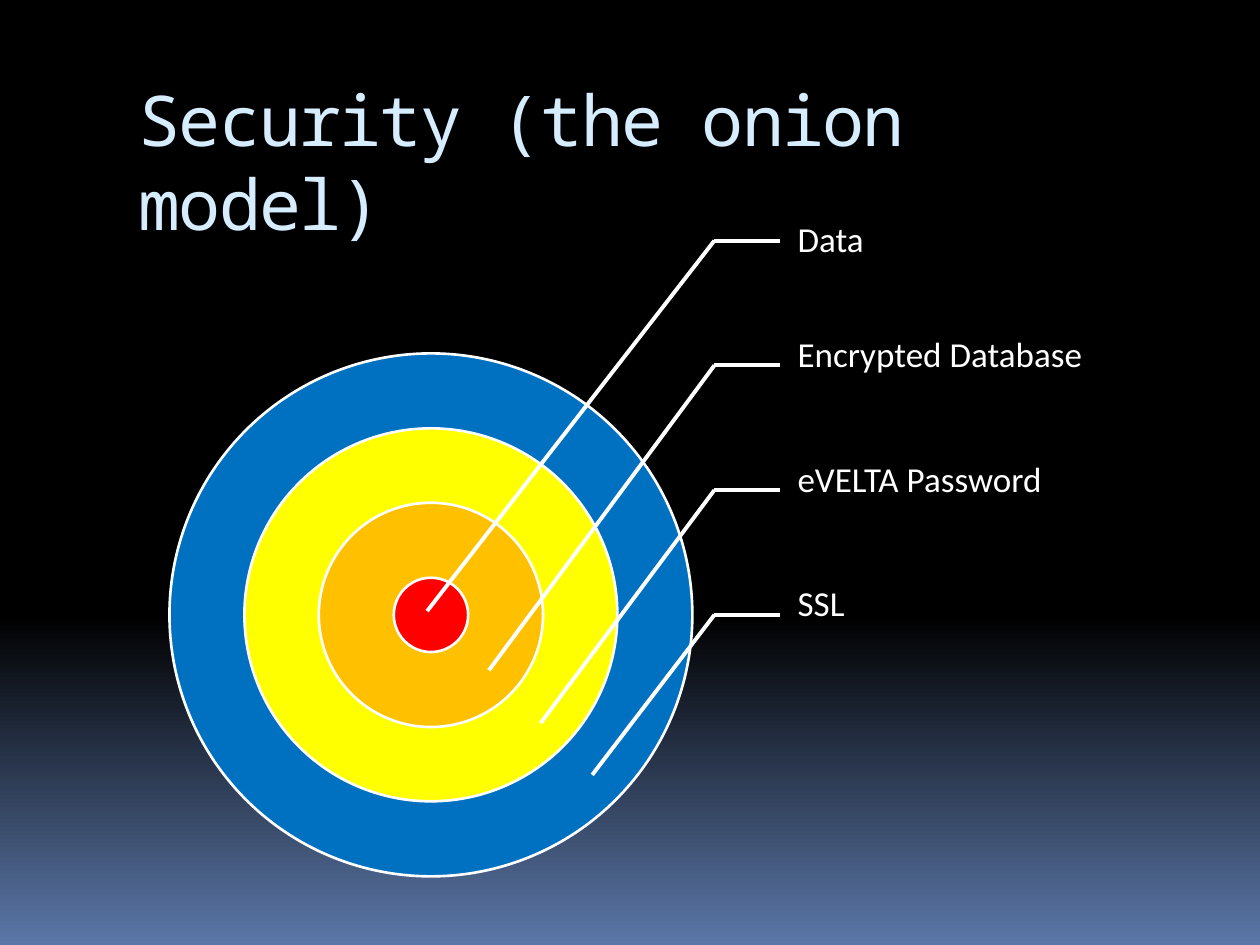
import pptx
import pptx.dml.color
import pptx.enum.shapes
import pptx.enum.text
import pptx.oxml.ns
import pptx.util
from lxml import etree
from pptx.util import Inches, Pt

TITLE = "Security (the onion model)"
WHITE = "FFFFFF"

# Outermost ring first: diameter, fill
RINGS = [(4.15, "0070C0"), (2.96, "FFFF00"), (1.78, "FFC000"), (0.59, "FF0000")]
CENTER_X, CENTER_Y = 3.42, 4.88

# Innermost layer first: label, label top, point inside its ring
LAYERS = [
    ("Data", 1.42, (3.39, 4.85)),
    ("Encrypted Database", 2.33, (3.88, 5.32)),
    ("eVELTA Password", 3.32, (4.29, 5.74)),
    ("SSL", 4.31, (4.7, 6.15)),
]
LABEL_LEFT, LABEL_WIDTH, LABEL_HEIGHT = 6.17, 2.85, 0.99
ELBOW_X, LEADER_END_X = 5.67, 6.19
FIRST_LEADER_Y, LEADER_STEP = 1.91, 0.99


def color(hex_value):
    return pptx.dml.color.RGBColor.from_string(hex_value)


def style_run(run, font_name, size, hex_value):
    run.font.name = font_name
    run.font.size = Pt(size)
    run.font.color.rgb = color(hex_value)


def set_background(slide):
    fill = slide.background.fill
    fill.gradient()
    fill.gradient_angle = 270
    for stop, position, hex_value in zip(fill.gradient_stops, (0.65, 1), ("000000", "5B77A8")):
        stop.position = position
        stop.color.rgb = color(hex_value)


def set_title(slide):
    title = slide.shapes.title
    title.left, title.top = Inches(1), Inches(0.56)
    title.width, title.height = Inches(8.5), Inches(1)
    frame = title.text_frame
    frame.text = TITLE
    frame.word_wrap = True
    frame.auto_size = pptx.enum.text.MSO_AUTO_SIZE.NONE
    frame.vertical_anchor = pptx.enum.text.MSO_ANCHOR.TOP
    paragraph = frame.paragraphs[0]
    paragraph.alignment = pptx.enum.text.PP_ALIGN.LEFT
    paragraph.line_spacing = 1.0
    run = paragraph.runs[0]
    style_run(run, "Noto Sans Mono", 40, "D6ECFF")
    run._r.get_or_add_rPr().set("spc", "-100")


def add_ring(shapes, diameter, fill):
    ring = shapes.add_shape(
        pptx.enum.shapes.MSO_SHAPE.OVAL,
        Inches(CENTER_X - diameter / 2), Inches(CENTER_Y - diameter / 2),
        Inches(diameter), Inches(diameter))
    ring.shadow.inherit = False
    ring.fill.solid()
    ring.fill.fore_color.rgb = color(fill)
    ring.line.color.rgb = color(WHITE)
    ring.line.width = Pt(1.5)


def add_label(shapes, text, top):
    label = shapes.add_textbox(
        Inches(LABEL_LEFT), Inches(top), Inches(LABEL_WIDTH), Inches(LABEL_HEIGHT))
    frame = label.text_frame
    frame.text = text
    frame.word_wrap = True
    frame.vertical_anchor = pptx.enum.text.MSO_ANCHOR.MIDDLE
    frame.margin_left = Inches(0.16)
    frame.margin_top = frame.margin_right = frame.margin_bottom = Inches(0.03)
    paragraph = frame.paragraphs[0]
    paragraph.line_spacing = 0.9
    style_run(paragraph.runs[0], "Calibri", 20, WHITE)


def add_line(shapes, start, end):
    line = shapes.add_connector(
        pptx.enum.shapes.MSO_CONNECTOR.STRAIGHT,
        *(Inches(value) for value in (*start, *end)))
    line.line.color.rgb = color(WHITE)
    line.line.width = Pt(2.25)
    etree.SubElement(line._element.spPr, pptx.oxml.ns.qn("a:effectLst"))


def main():
    presentation = pptx.Presentation()
    presentation.slide_width, presentation.slide_height = Inches(10), Inches(7.5)
    slide = presentation.slides.add_slide(presentation.slide_layouts[5])
    set_background(slide)
    set_title(slide)

    onion = slide.shapes.add_group_shape().shapes
    for diameter, fill in RINGS:
        add_ring(onion, diameter, fill)
    for index, (text, label_top, target) in enumerate(LAYERS):
        elbow = (ELBOW_X, FIRST_LEADER_Y + index * LEADER_STEP)
        add_label(onion, text, label_top)
        add_line(onion, elbow, (LEADER_END_X, elbow[1]))
        add_line(onion, elbow, target)

    presentation.save("out.pptx")


if __name__ == "__main__":
    main()
